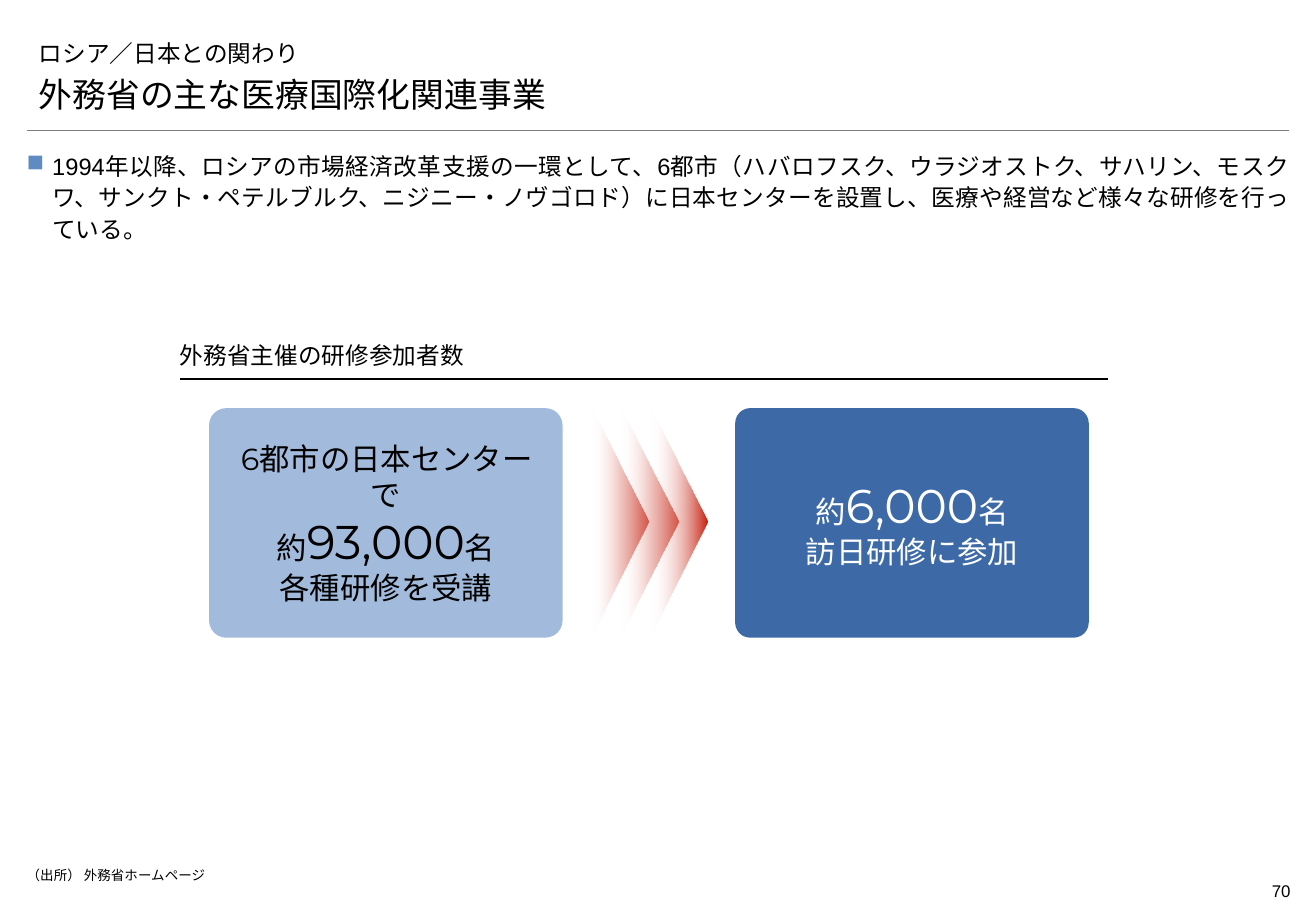
"""Build the slide on medical training programmes linking Russia and Japan."""
import pptx
import pptx.util
import pptx.dml.color
import pptx.enum.shapes
import pptx.enum.text
import pptx.oxml.ns
import pptx.oxml.xmlchemy

Inches = pptx.util.Inches
Pt = pptx.util.Pt
RGBColor = pptx.dml.color.RGBColor
Align = pptx.enum.text.PP_ALIGN
Anchor = pptx.enum.text.MSO_ANCHOR
AutoSize = pptx.enum.text.MSO_AUTO_SIZE
Shape = pptx.enum.shapes.MSO_SHAPE
make_element = pptx.oxml.xmlchemy.OxmlElement

BLACK = RGBColor(0x00, 0x00, 0x00)
WHITE = RGBColor(0xFF, 0xFF, 0xFF)
GRAY = RGBColor(0x7F, 0x7F, 0x7F)
LIGHT_BLUE = RGBColor(0xA2, 0xBB, 0xDC)
DARK_BLUE = RGBColor(0x3D, 0x6A, 0xA7)
BULLET_BLUE = RGBColor(0x5F, 0x8A, 0xC3)
RED = RGBColor(0xC7, 0x1F, 0x0D)

HEADING_FONT = "Montserrat"
BODY_FONT = "Arial"
BODY_INSETS = (0, 0, 0, 0)
DEFAULT_INSETS = (0.1, 0.05, 0.1, 0.05)

CATEGORY = "ロシア／日本との関わり"
TITLE = "外務省の主な医療国際化関連事業"
SUMMARY = (
    "1994年以降、ロシアの市場経済改革支援の一環として、6都市（ハバロフスク、"
    "ウラジオストク、サハリン、モスクワ、サンクト・ペテルブルク、ニジニー・ノヴゴロド）"
    "に日本センターを設置し、医療や経営など様々な研修を行っている。"
)
CHART_HEADING = "外務省主催の研修参加者数"
SOURCE = "（出所） 外務省ホームページ"
PAGE_NUMBER = "70"

MARGIN, CONTENT_WIDTH = 0.22, 10.39
HEADING_LEFT, HEADING_WIDTH, HEADING_RULE = 1.48, 7.64, 3.12
CARD_TOP, CARD_WIDTH, CARD_HEIGHT = 3.36, 2.91, 1.89
CHEVRON_LEFT, CHEVRON_TOP, CHEVRON_DEPTH = 4.16, 4.06, 0.47
CHEVRON_STEP, CHEVRON_COUNT = 0.24, 3

CARDS = [
    (1.72, LIGHT_BLUE, BLACK, 0.075, True,
     [[("6都市の日本センターで", 18)],
      [("約", 18), ("93,000", 28), ("名\n各種研修を受講", 18)]]),
    (6.05, DARK_BLUE, WHITE, 0.066, False,
     [[("約", 18), ("6,000", 28), ("名\n訪日研修に参加", 18)]]),
]


def add_run(paragraph, text, size, font, color):
    for index, line in enumerate(text.split("\n")):
        if index:
            paragraph.add_line_break()
        run = paragraph.add_run()
        run.text = line
        run.font.size = Pt(size)
        run.font.name = font
        run.font.color.rgb = color


def add_text(slide, box, text, size, font, insets=DEFAULT_INSETS,
             anchor=Anchor.TOP, align=Align.LEFT, auto_size=AutoSize.NONE):
    shape = slide.shapes.add_textbox(*map(Inches, box))
    frame = shape.text_frame
    frame.word_wrap = True
    frame.auto_size = auto_size
    frame.vertical_anchor = anchor
    (frame.margin_left, frame.margin_top,
     frame.margin_right, frame.margin_bottom) = map(Inches, insets)
    paragraph = frame.paragraphs[0]
    paragraph.alignment = align
    add_run(paragraph, text, size, font, BLACK)
    return paragraph


def add_rule(slide, left, width, top, color, weight):
    rule = slide.shapes.add_connector(
        pptx.enum.shapes.MSO_CONNECTOR.STRAIGHT,
        Inches(left), Inches(top), Inches(left + width), Inches(top))
    rule.line.color.rgb = color
    rule.line.width = Pt(weight)
    rule._element.spPr.append(make_element("a:effectLst"))


def add_bullet(paragraph):
    properties = paragraph._p.get_or_add_pPr()
    properties.set("marL", str(Inches(0.21)))
    properties.set("indent", str(-Inches(0.21)))
    bullet_color = make_element("a:buClr")
    color = make_element("a:srgbClr")
    color.set("val", str(BULLET_BLUE))
    bullet_color.append(color)
    bullet = make_element("a:buChar")
    bullet.set("char", "■")
    properties.extend([bullet_color, bullet])


def add_card(slide, left, fill, color, rounding, wrap, paragraphs):
    card = slide.shapes.add_shape(
        Shape.ROUNDED_RECTANGLE, Inches(left), Inches(CARD_TOP),
        Inches(CARD_WIDTH), Inches(CARD_HEIGHT))
    card.adjustments[0] = rounding
    card.shadow.inherit = False
    card.fill.solid()
    card.fill.fore_color.rgb = fill
    card.line.fill.background()
    frame = card.text_frame
    frame.word_wrap = wrap
    frame.vertical_anchor = Anchor.MIDDLE
    for index, runs in enumerate(paragraphs):
        paragraph = frame.add_paragraph() if index else frame.paragraphs[0]
        paragraph.alignment = Align.CENTER
        for text, size in runs:
            add_run(paragraph, text, size, HEADING_FONT, color)


def add_chevron(slide, left):
    chevron = slide.shapes.add_shape(
        Shape.ISOSCELES_TRIANGLE, Inches(left), Inches(CHEVRON_TOP),
        Inches(CARD_HEIGHT), Inches(CHEVRON_DEPTH))
    chevron.rotation = 90
    chevron.shadow.inherit = False
    chevron.line.fill.background()
    chevron.fill.gradient()
    chevron.fill.gradient_angle = 270
    tip, base = chevron.fill.gradient_stops
    tip.position, base.position = 0, 1
    tip.color.rgb, base.color.rgb = RED, WHITE
    alpha = make_element("a:alpha")
    alpha.set("val", "0")
    stops = chevron._element.spPr.findall(".//" + pptx.oxml.ns.qn("a:gs"))
    stops[-1][0].append(alpha)


def main():
    presentation = pptx.Presentation()
    presentation.slide_width = Inches(10.83)
    presentation.slide_height = Inches(7.5)
    slide = presentation.slides.add_slide(presentation.slide_layouts[6])

    add_rule(slide, MARGIN, CONTENT_WIDTH, 1.07, GRAY, 0.25)
    add_text(slide, (9.83, 7.2, 0.79, 0.27), PAGE_NUMBER, 10, BODY_FONT,
             (0, 0.05, 0, 0.05), align=Align.RIGHT)
    for top, text, size in [(0.21, CATEGORY, 14), (0.6, TITLE, 20)]:
        add_text(slide, (MARGIN, top, CONTENT_WIDTH, 0.39), text, size,
                 HEADING_FONT, anchor=Anchor.BOTTOM)

    summary = add_text(slide, (MARGIN, 1.23, CONTENT_WIDTH, 0.5), SUMMARY, 14,
                       BODY_FONT, BODY_INSETS, align=Align.JUSTIFY,
                       auto_size=AutoSize.SHAPE_TO_FIT_TEXT)
    summary.line_spacing = 1.1
    summary.space_after = Pt(2)
    add_bullet(summary)

    for card in CARDS:
        add_card(slide, *card)
    add_text(slide, (MARGIN, 7.14, 10, 0.16), SOURCE, 8, BODY_FONT, BODY_INSETS)
    for index in range(CHEVRON_COUNT):
        add_chevron(slide, CHEVRON_LEFT + index * CHEVRON_STEP)

    add_rule(slide, HEADING_LEFT, HEADING_WIDTH, HEADING_RULE, BLACK, 0.75)
    add_text(slide, (HEADING_LEFT, HEADING_RULE - 0.31, HEADING_WIDTH, 0.31),
             CHART_HEADING, 14, HEADING_FONT, (0, 0.05, 0, 0.08), Anchor.BOTTOM)

    presentation.save("out.pptx")


if __name__ == "__main__":
    main()
